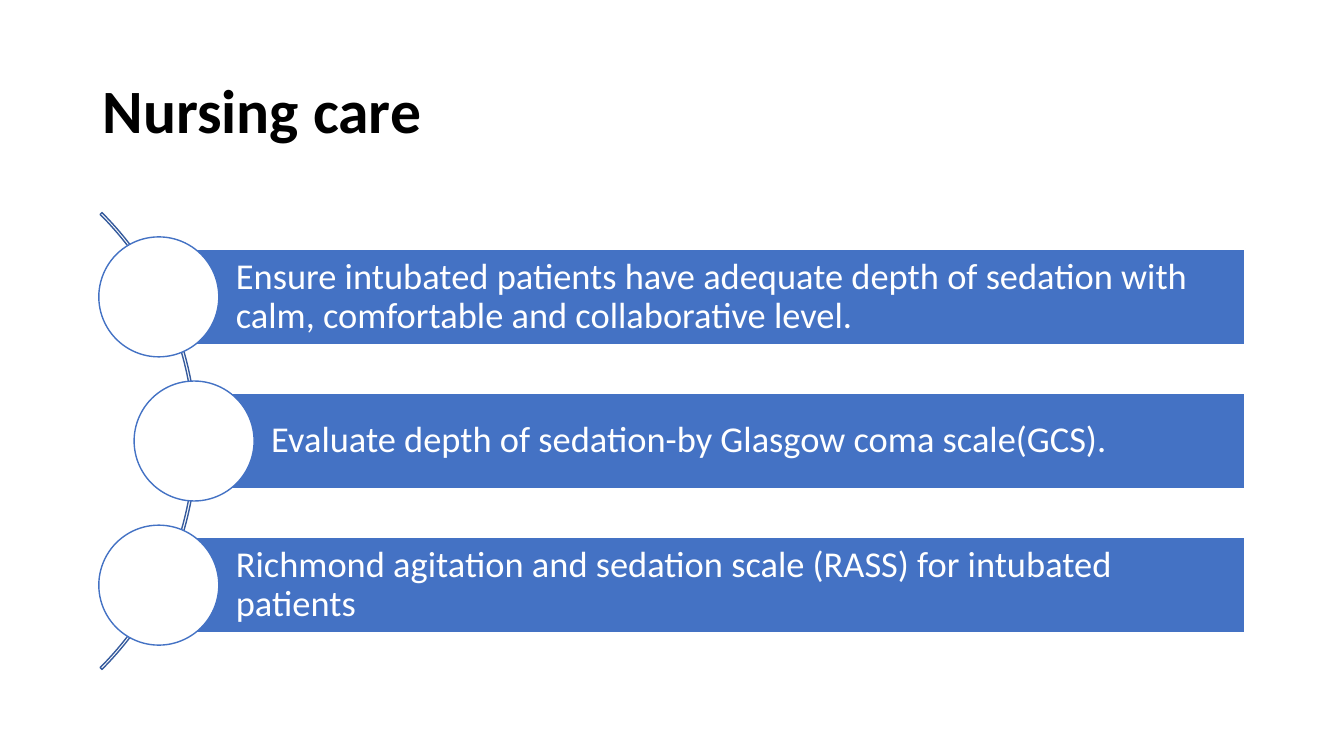
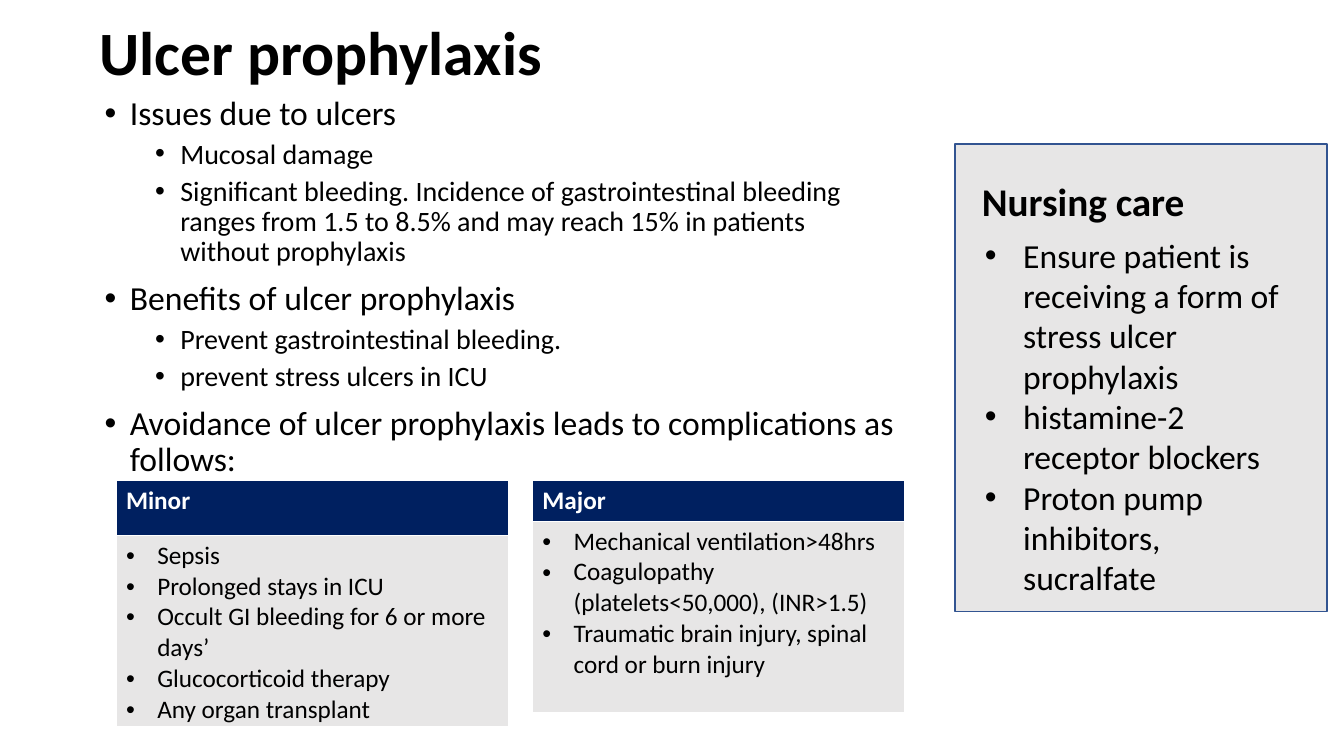
import dataclasses

import lxml.etree
import pptx
import pptx.dml.color
import pptx.enum.shapes
import pptx.enum.text
import pptx.oxml.ns
import pptx.util

Inches = pptx.util.Inches
Pt = pptx.util.Pt
SHAPE = pptx.enum.shapes.MSO_SHAPE
ANCHOR = pptx.enum.text.MSO_ANCHOR


@dataclasses.dataclass(frozen=True)
class Theme:
    font: str = "Calibri"
    black: str = "000000"
    white: str = "FFFFFF"
    blue: str = "4472C4"
    arc_line: str = "365B9D"
    panel_line: str = "325491"
    navy: str = "002060"
    grey: str = "E7E6E6"
    title: int = 44
    heading: int = 28
    bar: int = 26
    body: int = 24
    sub: int = 20
    table: int = 18
    line_spacing: float = 0.9


THEME = Theme()

CARE_STEPS = [
    "Ensure intubated patients have adequate depth of sedation with calm, "
    "comfortable and collaborative level.",
    "Evaluate depth of sedation-by Glasgow coma scale(GCS).",
    "Richmond agitation and sedation scale (RASS) for intubated patients",
]
# Outline of (level, text)
ULCER_OUTLINE = [
    (0, "Issues due to ulcers"),
    (1, "Mucosal damage"),
    (1, "Significant bleeding. Incidence of gastrointestinal bleeding ranges "
        "from 1.5 to 8.5% and may reach 15% in patients without prophylaxis"),
    (0, "Benefits of ulcer prophylaxis"),
    (1, "Prevent gastrointestinal bleeding."),
    (1, "prevent stress ulcers in ICU"),
    (0, "Avoidance of ulcer prophylaxis leads to complications as follows:"),
]
MINOR = ["Sepsis", "Prolonged stays in ICU", "Occult GI bleeding for 6 or more days’",
         "Glucocorticoid therapy", "Any organ transplant"]
MAJOR = ["Mechanical ventilation>48hrs", "Coagulopathy (platelets<50,000), (INR>1.5)",
         "Traumatic brain injury, spinal cord or burn injury"]
ULCER_CARE = ["Ensure patient is receiving a form of stress ulcer prophylaxis",
              "histamine-2 receptor blockers", "Proton pump inhibitors, sucralfate"]


def rgb(color):
    return pptx.dml.color.RGBColor.from_string(color)


# Text
def add_run(p, text, size, color=THEME.black, bold=False):
    r = p.add_run()
    r.text = text
    r.font.name = THEME.font
    r.font.size = Pt(size)
    r.font.bold = bold
    r.font.color.rgb = rgb(color)


def next_paragraph(tf):
    """Return the empty first paragraph, or a new one."""
    p = tf.paragraphs[-1]
    return tf.add_paragraph() if p.runs else p


def add_bullet(tf, text, size, left, hang):
    p = next_paragraph(tf)
    add_run(p, text, size)
    ppr = p._p.get_or_add_pPr()
    ppr.set("marL", str(Inches(left)))
    ppr.set("indent", str(-Inches(hang)))
    qn = pptx.oxml.ns.qn
    lxml.etree.SubElement(ppr, qn("a:buFont"), typeface="Arial")
    lxml.etree.SubElement(ppr, qn("a:buChar"), char="•")
    return p


def add_textbox(slide, x, y, w, h, wrap=True):
    sp = slide.shapes.add_textbox(Inches(x), Inches(y), Inches(w), Inches(h))
    tf = sp.text_frame
    tf.word_wrap = wrap
    return tf


def add_title(slide, text, x, y, w, h):
    tf = add_textbox(slide, x, y, w, h)
    tf.vertical_anchor = ANCHOR.MIDDLE
    p = tf.paragraphs[0]
    p.line_spacing = THEME.line_spacing
    add_run(p, text, THEME.title, bold=True)


# Shapes
def add_shape(slide, kind, x, y, w, h, line, fill=None):
    sp = slide.shapes.add_shape(kind, Inches(x), Inches(y), Inches(w), Inches(h))
    sp.shadow.inherit = False
    sp.line.color.rgb = rgb(line)
    sp.line.width = Pt(1)
    if fill:
        sp.fill.solid()
        sp.fill.fore_color.rgb = rgb(fill)
    else:
        sp.fill.background()
    return sp


def add_step(slide, text, x, y):
    """A bar that runs to the right margin, with a circle over its left end."""
    bar_x, right, bar_h, circle = x + 0.6, 12.35, 0.95, 1.19
    sp = add_shape(slide, SHAPE.RECTANGLE, bar_x, y, right - bar_x, bar_h,
                   THEME.white, THEME.blue)
    tf = sp.text_frame
    tf.word_wrap = True
    tf.vertical_anchor = ANCHOR.MIDDLE
    tf.margin_left = Inches(0.76)
    tf.margin_top = tf.margin_right = tf.margin_bottom = Inches(0.07)
    p = tf.paragraphs[0]
    p.alignment = pptx.enum.text.PP_ALIGN.LEFT
    p.line_spacing = THEME.line_spacing
    add_run(p, text, THEME.bar, THEME.white)
    add_shape(slide, SHAPE.OVAL, x, y - (circle - bar_h) / 2, circle, circle,
              THEME.blue, THEME.white)


# Tables
def add_list_table(slide, heading, items, x, y, w, row_heights):
    frame = slide.shapes.add_table(2, 1, Inches(x), Inches(y), Inches(w),
                                   Inches(sum(row_heights)))
    table = frame.table
    for row, height in zip(table.rows, row_heights):
        row.height = Inches(height)
    head, body = table.cell(0, 0), table.cell(1, 0)
    for cell, fill in ((head, THEME.navy), (body, THEME.grey)):
        cell.fill.solid()
        cell.fill.fore_color.rgb = rgb(fill)
    add_run(head.text_frame.paragraphs[0], heading, THEME.table, THEME.white, True)
    for item in items:
        add_bullet(body.text_frame, item, THEME.table, 0.31, 0.31)


# Slides
def build_nursing_care(slide):
    add_title(slide, "Nursing care", 0.92, 0.4, 11.5, 1.45)
    arc = add_shape(slide, SHAPE.BLOCK_ARC, -4.46, 1.17, 6.41, 6.41, THEME.arc_line)
    for i, value in enumerate((189, 27, 0.004)):
        arc.adjustments[i] = value
    for i, text in enumerate(CARE_STEPS):
        add_step(slide, text, 0.98 + 0.35 * (i % 2), 2.47 + 1.43 * i)


def build_ulcer_prophylaxis(slide):
    add_title(slide, "Ulcer prophylaxis", 0.89, 0.07, 11.5, 0.97)

    # Outline
    tf = add_textbox(slide, 0.94, 0.91, 8.03, 4.76)
    for level, text in ULCER_OUTLINE:
        size, before = ((THEME.body, 10), (THEME.sub, 5))[level]
        p = add_bullet(tf, text, size, 0.25 + 0.5 * level, 0.25)
        p.level = level
        p.line_spacing = THEME.line_spacing
        p.space_before = Pt(before)

    # Complications
    add_list_table(slide, "Minor", MINOR, 1.15, 4.77, 3.89, (0.54, 1.9))
    add_list_table(slide, "Major", MAJOR, 5.28, 4.77, 3.69, (0.4, 1.9))

    # Care panel
    add_shape(slide, SHAPE.RECTANGLE, 9.47, 1.43, 3.69, 4.64,
              THEME.panel_line, THEME.grey)
    tf = add_textbox(slide, 9.64, 1.71, 2.24, 0.57, wrap=False)
    add_run(tf.paragraphs[0], "Nursing care", THEME.heading, bold=True)
    tf = add_textbox(slide, 9.67, 2.28, 3.25, 3.74)
    for text in ULCER_CARE:
        add_bullet(tf, text, THEME.body, 0.38, 0.38)


def main():
    prs = pptx.Presentation()
    prs.slide_width, prs.slide_height = Inches(13.33), Inches(7.5)
    for build in (build_nursing_care, build_ulcer_prophylaxis):
        build(prs.slides.add_slide(prs.slide_layouts[6]))
    prs.save("out.pptx")


if __name__ == "__main__":
    main()
